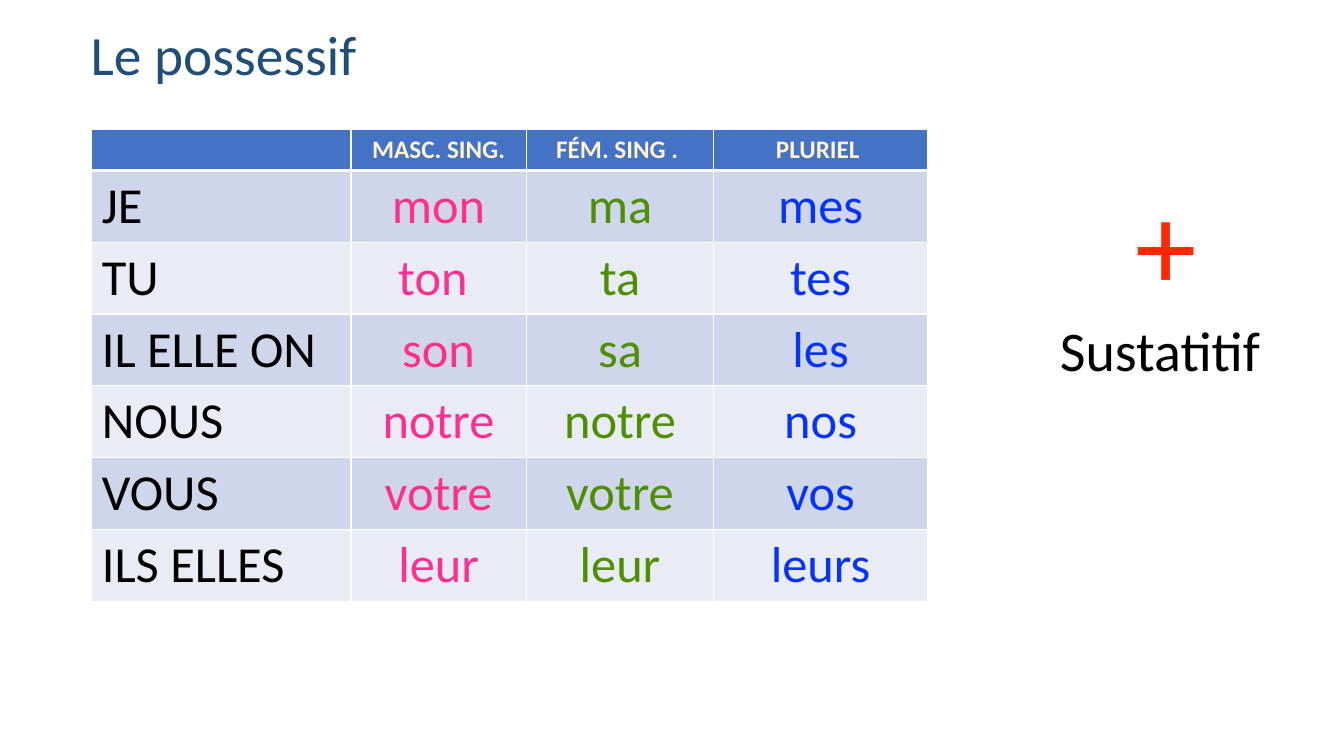
from dataclasses import dataclass

from lxml.etree import SubElement
from pptx import Presentation
from pptx.dml.color import RGBColor
from pptx.enum.text import MSO_ANCHOR, MSO_AUTO_SIZE, PP_ALIGN
from pptx.oxml.ns import qn
from pptx.slide import Slide
from pptx.table import _Cell as Cell
from pptx.text.text import Font
from pptx.util import Inches, Pt

SLIDE_WIDTH, SLIDE_HEIGHT = Inches(13.33), Inches(7.5)
FONT_NAME = "Calibri"

NAVY = RGBColor(0x1F, 0x4E, 0x79)
HEADER_BLUE = RGBColor(0x44, 0x72, 0xC4)
CREAM = RGBColor(0xFF, 0xF2, 0xCC)
BANDS = RGBColor(0xCF, 0xD5, 0xEA), RGBColor(0xE9, 0xEB, 0xF5)
BLACK = RGBColor(0, 0, 0)
PINK = RGBColor(0xFF, 0x2F, 0x92)
GREEN = RGBColor(0x4E, 0x8F, 0x00)
BLUE = RGBColor(0x04, 0x32, 0xFF)
RED = RGBColor(0xFF, 0x26, 0x00)
WHITE = RGBColor(0xFF, 0xFF, 0xFF)


@dataclass(frozen=True)
class Frame:
    """A rectangle in percent of the slide's width and height."""
    left: float
    top: float
    width: float
    height: float

    def lengths(self) -> tuple[int, int, int, int]:
        return across(self.left), down(self.top), across(self.width), down(self.height)


@dataclass(frozen=True)
class Column:
    header: str
    width: float
    color: RGBColor
    alignment: PP_ALIGN
    entries: tuple[str, ...]


TITLE_FRAME = Frame(6, 3.6, 86.25, 8.13)
NOUN_FRAME = Frame(78, 21.47, 17.55, 30.13)
TABLE_LEFT, TABLE_TOP = 6.83, 17.07
HEADER_HEIGHT, ROW_HEIGHT = 5.47, 9.47
COLUMNS = (
    Column("", 19.28, BLACK, PP_ALIGN.LEFT,
           ("JE", "TU", "IL ELLE ON", "NOUS", "VOUS", "ILS ELLES")),
    Column("MASC. SING.", 13.05, PINK, PP_ALIGN.CENTER,
           ("mon", "ton ", "son", "notre", "votre", "leur")),
    Column("FÉM. SING . ", 13.95, GREEN, PP_ALIGN.CENTER,
           ("ma", "ta", "sa", "notre", "votre", "leur")),
    Column("PLURIEL ", 15.9, BLUE, PP_ALIGN.CENTER,
           ("mes", "tes", "les", "nos", "vos", "leurs")),
)


def across(percent: float) -> int:
    return round(SLIDE_WIDTH * percent / 100)


def down(percent: float) -> int:
    return round(SLIDE_HEIGHT * percent / 100)


def style_font(font: Font, size: float, color: RGBColor, bold: bool = False) -> None:
    font.name, font.size, font.bold = FONT_NAME, Pt(size), bold
    font.color.rgb = color


def add_borders(cell: Cell, bottom_width: float) -> None:
    """Draw white borders; call before filling, as the lines come first in the XML."""
    properties = cell._tc.get_or_add_tcPr()
    for side, width in (("L", 1), ("R", 1), ("T", 1), ("B", bottom_width)):
        line = SubElement(properties, qn(f"a:ln{side}"), w=str(Pt(width)))
        SubElement(SubElement(line, qn("a:solidFill")), qn("a:srgbClr"), val=str(WHITE))


def fill_cell(cell: Cell, text: str, fill: RGBColor, color: RGBColor,
              alignment: PP_ALIGN, is_header: bool) -> None:
    add_borders(cell, 3 if is_header else 1)
    cell.fill.solid()
    cell.fill.fore_color.rgb = fill
    cell.text = text
    paragraph = cell.text_frame.paragraphs[0]
    paragraph.alignment = alignment
    style_font(paragraph.font, 18 if is_header else 36, color, is_header)


def add_title(slide: Slide) -> None:
    title = slide.shapes.title
    title.left, title.top, title.width, title.height = TITLE_FRAME.lengths()
    title.text_frame.text = "Le possessif"
    title.text_frame.auto_size = MSO_AUTO_SIZE.NONE
    title.text_frame.vertical_anchor = MSO_ANCHOR.MIDDLE
    paragraph = title.text_frame.paragraphs[0]
    paragraph.alignment = PP_ALIGN.LEFT
    paragraph.line_spacing = 0.9
    style_font(paragraph.font, 39.6, NAVY)


def add_possessives(slide: Slide) -> None:
    row_count = len(COLUMNS[0].entries)
    frame = Frame(TABLE_LEFT, TABLE_TOP, sum(column.width for column in COLUMNS),
                  HEADER_HEIGHT + row_count * ROW_HEIGHT)
    table = slide.shapes.add_table(row_count + 1, len(COLUMNS), *frame.lengths()).table
    for index, row in enumerate(table.rows):
        row.height = down(ROW_HEIGHT if index else HEADER_HEIGHT)
    for column_index, column in enumerate(COLUMNS):
        table.columns[column_index].width = across(column.width)
        fill_cell(table.cell(0, column_index), column.header, HEADER_BLUE, CREAM,
                  PP_ALIGN.CENTER, True)
        for row_index, entry in enumerate(column.entries):
            fill_cell(table.cell(row_index + 1, column_index), entry,
                      BANDS[row_index % 2], column.color, column.alignment, False)


def add_noun(slide: Slide) -> None:
    text_frame = slide.shapes.add_textbox(*NOUN_FRAME.lengths()).text_frame
    text_frame.word_wrap = True
    text_frame.auto_size = MSO_AUTO_SIZE.SHAPE_TO_FIT_TEXT
    paragraph = text_frame.paragraphs[0]
    paragraph.alignment = PP_ALIGN.CENTER
    for text, size, color in (("+ ", 88, RED), ("Sustatitif ", 40, BLACK)):
        run = paragraph.add_run()
        run.text = text
        style_font(run.font, size, color)


def main() -> None:
    presentation = Presentation()
    presentation.slide_width, presentation.slide_height = SLIDE_WIDTH, SLIDE_HEIGHT
    slide = presentation.slides.add_slide(presentation.slide_layouts.get_by_name("Title Only"))
    add_title(slide)
    add_possessives(slide)
    add_noun(slide)
    presentation.save("out.pptx")


if __name__ == "__main__":
    main()
